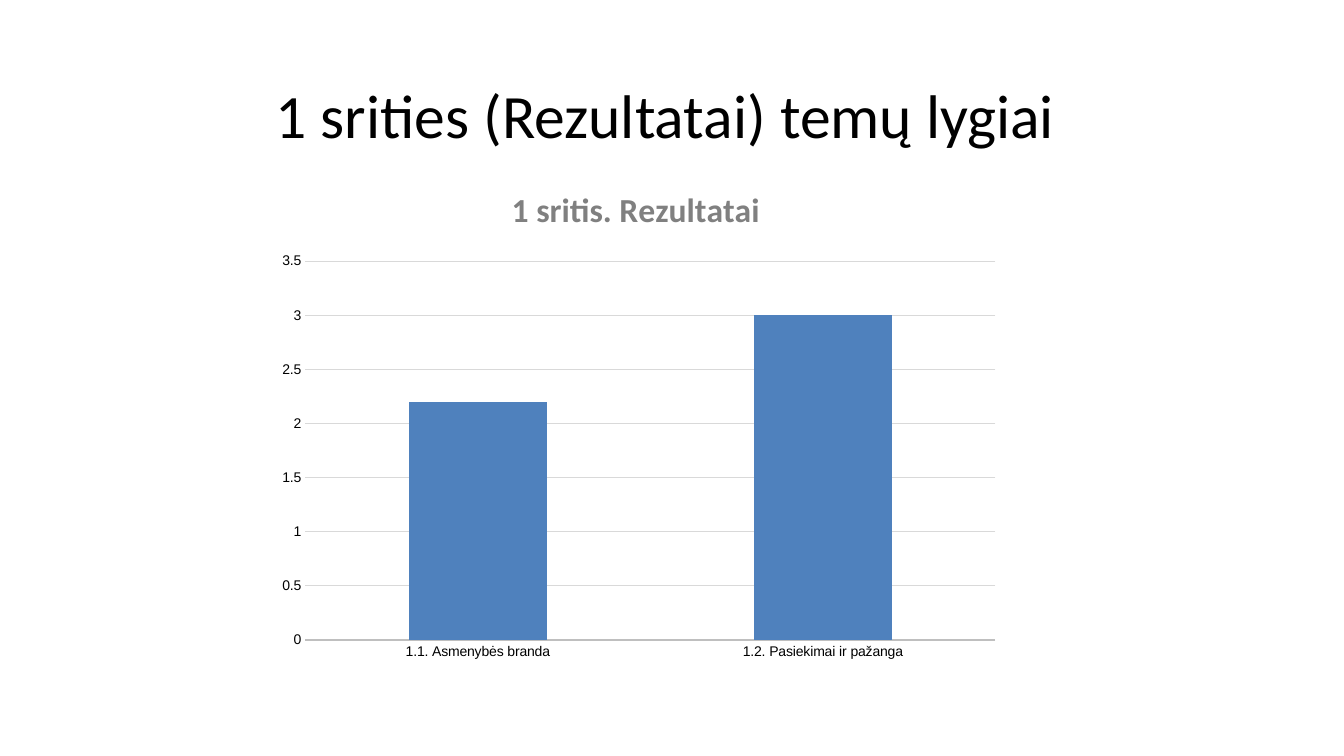
import lxml.etree
import pptx
import pptx.chart.data
import pptx.dml.color
import pptx.enum.chart
import pptx.enum.text
import pptx.oxml.ns
import pptx.util

Inches = pptx.util.Inches
Pt = pptx.util.Pt
qn = pptx.oxml.ns.qn

COLORS = {"text": "000000", "label": "808080", "bar": "4F81BD",
          "axis": "BFBFBF", "grid": "D9D9D9"}
LEVELS = {"1.1. Asmenybės branda": 2.2, "1.2. Pasiekimai ir pažanga": 3}


def color(name):
    """Return the named colour."""
    return pptx.dml.color.RGBColor.from_string(COLORS[name])


def style(font, size, name, tint, bold=False):
    """Format a font."""
    font.size, font.name, font.bold = Pt(size), name, bold
    font.color.rgb = color(tint)


def layout(parent, index, **places):
    """Give a chart part a manual layout at the given child index."""
    for old in parent.findall(qn("c:layout")):
        parent.remove(old)
    node = lxml.etree.Element(qn("c:layout"))
    parent.insert(index, node)
    manual = lxml.etree.SubElement(node, qn("c:manualLayout"))
    for tag, value in places.items():
        lxml.etree.SubElement(manual, qn("c:" + tag)).set("val", str(value))


def heading(slide, left, top, width, height):
    """Place the slide title in its box."""
    box = slide.shapes.add_textbox(
        Inches(left), Inches(top), Inches(width), Inches(height))
    frame = box.text_frame
    frame.word_wrap = True
    frame.vertical_anchor = pptx.enum.text.MSO_ANCHOR.MIDDLE
    frame.text = "1 srities (Rezultatai) temų lygiai "
    line = frame.paragraphs[0]
    line.alignment = pptx.enum.text.PP_ALIGN.CENTER
    style(line.runs[0].font, 44, "Calibri", "text")


def caption(chart):
    """Set the chart title above the plot."""
    chart.has_title = True
    title = chart.chart_title
    title.text_frame.text = "1 sritis. Rezultatai"
    style(title.text_frame.paragraphs[0].runs[0].font,
          24, "Calibri", "label", True)
    layout(title.element, 1, xMode="edge", yMode="edge", x=0.32, y=0.03)
    title.element.find(qn("c:overlay")).set("val", "1")


def axes(chart):
    """Format both axes and the grid."""
    none = pptx.enum.chart.XL_TICK_MARK.NONE
    for axis in (chart.category_axis, chart.value_axis):
        axis.major_tick_mark = axis.minor_tick_mark = none
    base = chart.category_axis.format.line
    base.color.rgb, base.width = color("axis"), Pt(1.5)
    scale = chart.value_axis
    scale.minimum_scale, scale.maximum_scale, scale.major_unit = 0, 3.5, 0.5
    scale.format.line.fill.background()
    scale.has_major_gridlines = True
    grid = scale.major_gridlines.format.line
    grid.color.rgb, grid.width = color("grid"), Pt(0.5)


def levels(slide, left, top, width, height):
    """Place the column chart of topic levels in its box."""
    data = pptx.chart.data.CategoryChartData()
    data.categories = list(LEVELS)
    data.add_series("Series 1", list(LEVELS.values()))
    chart = slide.shapes.add_chart(
        pptx.enum.chart.XL_CHART_TYPE.COLUMN_CLUSTERED, Inches(left),
        Inches(top), Inches(width), Inches(height), data).chart
    style(chart.font, 10, "Arial", "text")
    chart.has_legend = False
    caption(chart)
    axes(chart)
    plot = chart.plots[0]
    plot.gap_width, plot.vary_by_categories = 150, False
    fill = plot.series[0].format.fill
    fill.solid()
    fill.fore_color.rgb = color("bar")
    area = chart.element.find(".//" + qn("c:plotArea"))
    layout(area, 0, layoutTarget="inner", xMode="edge", yMode="edge",
           x=0.05, y=0.19, w=0.93, h=0.75)


def main():
    """Build and save the slide."""
    deck = pptx.Presentation()
    deck.slide_width, deck.slide_height = Inches(13.33), Inches(7.5)
    slide = deck.slides.add_slide(deck.slide_layouts[6])
    heading(slide, 0.92, 0.4, 11.5, 1.45)
    levels(slide, 2.66, 1.64, 7.36, 5.01)
    deck.save("out.pptx")


if __name__ == "__main__":
    main()
